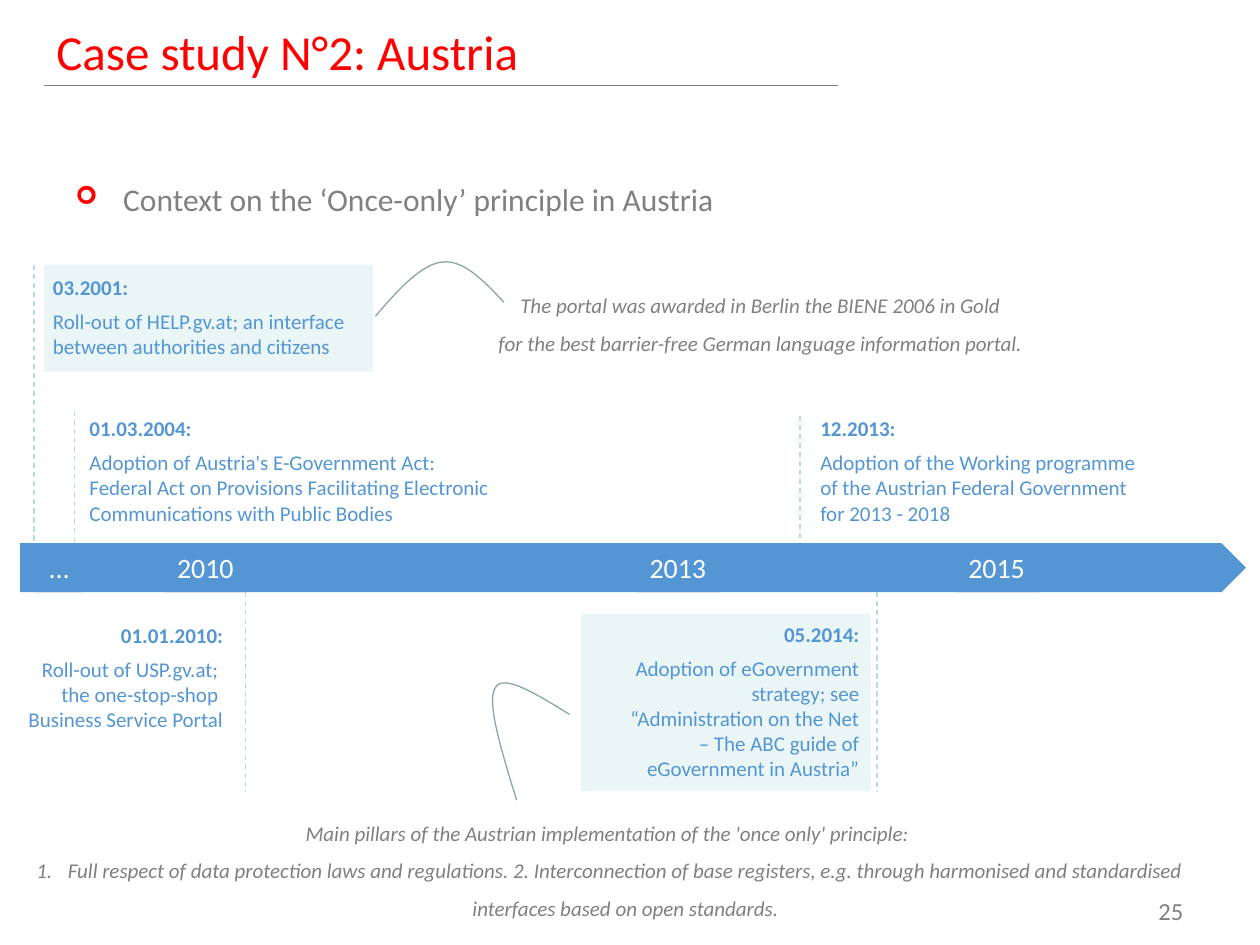
from lxml.etree import SubElement
from pptx import Presentation
from pptx.dml.color import RGBColor
from pptx.enum.dml import MSO_LINE
from pptx.enum.shapes import MSO_CONNECTOR, MSO_SHAPE
from pptx.enum.text import MSO_ANCHOR, PP_ALIGN
from pptx.oxml.ns import qn
from pptx.util import Inches, Pt

RED = RGBColor(0xFF, 0x00, 0x00)
GRAY = RGBColor(0x80, 0x80, 0x80)
BLUE = RGBColor(0x54, 0x96, 0xD4)
PALE = RGBColor(0xEA, 0xF5, 0xF6)
DASH = RGBColor(0xB6, 0xDC, 0xDF)
CURVE = RGBColor(0x8A, 0xA6, 0xA8)
WHITE = RGBColor(0xFF, 0xFF, 0xFF)
LEFT, CENTER, RIGHT = PP_ALIGN.LEFT, PP_ALIGN.CENTER, PP_ALIGN.RIGHT
TOP, MIDDLE, BOTTOM = MSO_ANCHOR.TOP, MSO_ANCHOR.MIDDLE, MSO_ANCHOR.BOTTOM

# Content: lengths in inches
TITLE = "Case study N°2: Austria"
CONTEXT = "Context on the ‘Once-only’ principle in Austria"
PAGE_NUMBER = "25"

BAR_TOP, BAR_HEIGHT = 4.31, 0.39
BAR_BOTTOM = BAR_TOP + BAR_HEIGHT
PERIODS = [("…", 0.28, 0.38), ("2010", 1.3, 0.66), ("2013", 5.05, 0.66), ("2015", 7.58, 0.66)]

# Box, alignment, anchor, date, description
EVENTS = [
    ((0.3, 2.18, 2.61, 1.08), LEFT, TOP, "03.2001:",
     ["Roll-out of HELP.gv.at; an interface between authorities and citizens"]),
    ((0.59, 3.3, 3.46, 1.08), LEFT, TOP, "01.03.2004:",
     ["Adoption of Austria's E-Government Act:",
      "Federal Act on Provisions Facilitating Electronic Communications with Public Bodies"]),
    ((6.39, 3.3, 2.78, 1.08), LEFT, TOP, "12.2013:",
     ["Adoption of the Working programme of the Austrian Federal Government for 2013 - 2018"]),
    ((-0.12, 4.94, 1.89, 1.02), RIGHT, TOP, "01.01.2010:",
     ["Roll-out of USP.gv.at; ", "the one-stop-shop ", "Business Service Portal"]),
    ((4.84, 5.12, 1.98, 1.08), RIGHT, BOTTOM, "05.2014:",
     ["Adoption of eGovernment strategy; see “Administration on the Net – The ABC guide of",
      "eGovernment in Austria”"]),
]
HIGHLIGHTS = [(0.35, 2.1, 2.61, 0.85), (4.61, 4.87, 2.3, 1.41)]
# x, top, bottom
MARKERS = [(0.27, 2.1, BAR_TOP), (0.59, 3.26, BAR_TOP), (6.35, 3.3, BAR_TOP),
           (1.95, BAR_BOTTOM, 6.28), (6.96, BAR_BOTTOM, 6.28)]

AWARD = ["The portal was awarded in Berlin the BIENE 2006 in Gold",
         "for the best barrier-free German language information portal."]
PILLARS = ["Main pillars of the Austrian implementation of the 'once only' principle: ",
           "Full respect of data protection laws and regulations. 2. Interconnection of base "
           "registers, e.g. through harmonised and standardised interfaces based on open standards."]

# Each curve is a chain of cubic Bezier segments: start, then three points per segment
CURVES = [
    [(2.98, 2.51), (3.16, 2.3), (3.34, 2.1), (3.51, 2.08), (3.68, 2.06), (3.84, 2.23), (4, 2.4)],
    [(4.52, 5.67), (4.26, 5.51), (3.99, 5.34), (3.93, 5.46),
     (3.86, 5.57), (3.98, 5.96), (4.1, 6.35)],
]
CURVE_STEPS = 16

presentation = Presentation()
presentation.slide_width, presentation.slide_height = Inches(10), Inches(7.5)
slide = presentation.slides.add_slide(presentation.slide_layouts[6])
shapes = slide.shapes


def write(shape, lines, size, color, align=LEFT, anchor=TOP, insets=(0.1, 0.05, 0.1, 0.05),
          wrap=True):
    frame = shape.text_frame
    frame.text = "\n".join(lines)
    frame.word_wrap, frame.vertical_anchor = wrap, anchor
    (frame.margin_left, frame.margin_top,
     frame.margin_right, frame.margin_bottom) = map(Inches, insets)
    for paragraph in frame.paragraphs:
        paragraph.alignment = align
        for run in paragraph.runs:
            run.font.name, run.font.size, run.font.color.rgb = "Calibri", Pt(size), color
    return frame.paragraphs


def add_text(box, lines, size, color, **layout):
    return write(shapes.add_textbox(*map(Inches, box)), lines, size, color, **layout)


def add_block(kind, box, fill):
    block = shapes.add_shape(kind, *map(Inches, box))
    block.shadow.inherit = False
    block.fill.solid()
    block.fill.fore_color.rgb = fill
    block.line.fill.background()
    return block


def add_line(x1, y1, x2, y2, color, dash=None):
    line = shapes.add_connector(MSO_CONNECTOR.STRAIGHT, *map(Inches, (x1, y1, x2, y2)))
    line.line.color.rgb, line.line.width = color, Pt(0.75)
    if dash:
        line.line.dash_style = dash
    SubElement(line._element.spPr, qn("a:effectLst"))


def add_bullet(paragraph, indent, *elements):
    properties = paragraph._p.get_or_add_pPr()
    properties.set("marL", str(Inches(indent)))
    properties.set("indent", str(-Inches(indent)))
    for tag, attributes in elements:
        SubElement(properties, qn(tag), attributes)
    return properties


def bezier(start, control1, control2, end, t):
    weights = ((1 - t) ** 3, 3 * t * (1 - t) ** 2, 3 * t * t * (1 - t), t ** 3)
    points = (start, control1, control2, end)
    return tuple(Inches(sum(w * p[axis] for w, p in zip(weights, points))) for axis in (0, 1))


def add_curve(points):
    outline = shapes.build_freeform(*map(Inches, points[0]))
    outline.add_line_segments(
        [bezier(*points[i:i + 4], step / CURVE_STEPS)
         for i in range(0, len(points) - 1, 3) for step in range(1, CURVE_STEPS + 1)],
        close=False)
    curve = outline.convert_to_shape()
    curve.shadow.inherit = False
    curve.fill.background()
    curve.line.color.rgb, curve.line.width = CURVE, Pt(0.75)


def add_note(box, lines):
    paragraphs = add_text(box, lines, 12, GRAY, align=CENTER)
    for paragraph in paragraphs:
        paragraph.line_spacing = 1.5
        for run in paragraph.runs:
            run.font.italic = True
    return paragraphs


# Heading, context and page number
add_line(0.35, 0.68, 6.65, 0.68, GRAY)
add_text((0.35, 0.13, 6.3, 0.55), [TITLE], 28, RED, anchor=MIDDLE)
context = add_text((0.5, 1.38, 9, 0.5), [CONTEXT], 18, GRAY)[0]
bullet = add_bullet(context, 0.38, ("a:buClr", {}), ("a:buSzPct", {"val": "80000"}),
                    ("a:buFont", {"typeface": "Wingdings"}), ("a:buChar", {"char": "➢"}))
SubElement(bullet.find(qn("a:buClr")), qn("a:srgbClr"), {"val": str(RED)})
add_text((8.78, 7.06, 0.71, 0.4), [PAGE_NUMBER], 14, GRAY, align=RIGHT)

# Timeline bar with its periods
for box in HIGHLIGHTS:
    add_block(MSO_SHAPE.RECTANGLE, box, PALE)
add_block(MSO_SHAPE.PENTAGON, (0.16, BAR_TOP, 9.73, BAR_HEIGHT), BLUE)
for period, x, width in PERIODS:
    label = add_block(MSO_SHAPE.RECTANGLE, (x, BAR_TOP, width, BAR_HEIGHT), BLUE)
    write(label, [period], 16, WHITE, align=CENTER, anchor=MIDDLE, insets=(0, 0, 0, 0), wrap=False)

# Events and their dashed markers
for x, top, bottom in MARKERS:
    add_line(x, top, x, bottom, DASH, MSO_LINE.DASH)
for box, align, anchor, date, description in EVENTS:
    paragraphs = add_text(box, [date, *description], 12, BLUE, align=align, anchor=anchor,
                          insets=(0.12, 0, 0, 0))
    paragraphs[0].space_after = Pt(5)
    paragraphs[0].runs[0].font.bold = True

# Notes and the curves leading to them
add_note((3.83, 2.17, 4.41, 0.71), AWARD)
pillars = add_note((-0.04, 6.36, 9.76, 1.01), PILLARS)
add_bullet(pillars[1], 0.25, ("a:buFont", {"typeface": "+mj-lt"}),
           ("a:buAutoNum", {"type": "arabicPeriod"}))
for points in CURVES:
    add_curve(points)

presentation.save("out.pptx")
